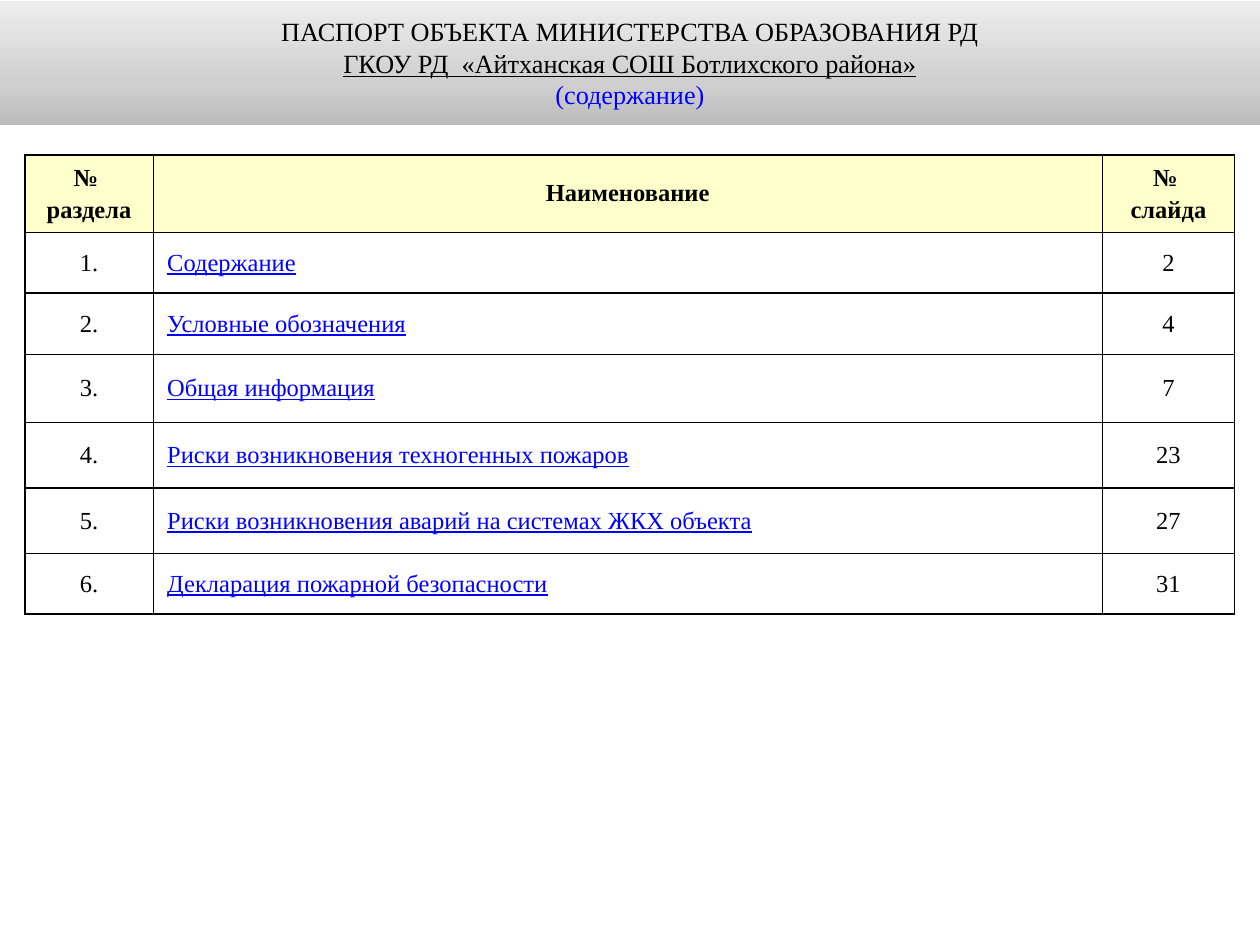
from lxml.etree import SubElement
from pptx import Presentation
from pptx.dml.color import RGBColor
from pptx.enum.shapes import MSO_SHAPE as SHAPE
from pptx.enum.text import MSO_ANCHOR as ANCHOR, PP_ALIGN as ALIGN
from pptx.oxml.ns import qn
from pptx.util import Cm, Pt


def rgb(value):
    return RGBColor.from_string(value)


def style(p, size, color="000000", align=ALIGN.CENTER, bold=False, underline=False):
    p.alignment = align
    for r in p.runs:
        r.font.name = "Times New Roman"
        r.font.size = Pt(size)
        r.font.bold = bold
        r.font.underline = underline
        r.font.color.rgb = rgb(color)


prs = Presentation()
prs.slide_width, prs.slide_height = Cm(25.4), Cm(19.05)
s = prs.slides.add_slide(prs.slide_layouts[6])

# Contents table
rows = [
    ("№ \nраздела", "Наименование", "№ \nслайда"),
    ("1.", "Содержание", "2"),
    ("2.", "Условные обозначения", "4"),
    ("3.", "Общая информация", "7"),
    ("4.", "Риски возникновения техногенных пожаров", "23"),
    ("5.", "Риски возникновения аварий на системах ЖКХ объекта", "27"),
    ("6.", "Декларация пожарной безопасности", "31"),
]
widths = [2.59, 19.13, 2.67]
heights = [1.57, 1.22, 1.24, 1.37, 1.32, 1.32, 1.22]

table = s.shapes.add_table(len(rows), len(widths), Cm(0.5), Cm(3.12),
                           Cm(sum(widths)), Cm(sum(heights))).table
for column, width in zip(table.columns, widths):
    column.width = Cm(width)

for i, (row, height) in enumerate(zip(rows, heights)):
    table.rows[i].height = Cm(height)
    header = i == 0
    for j, text in enumerate(row):
        cell = table.cell(i, j)
        cell.text_frame.text = text
        cell.vertical_anchor = ANCHOR.MIDDLE
        cell.margin_left = cell.margin_right = Cm(0.28)
        cell.margin_top = cell.margin_bottom = Cm(0.13)

        # Borders go ahead of the fill in the cell properties
        tc_pr = cell._tc.get_or_add_tcPr()
        for side in ("a:lnL", "a:lnR", "a:lnT", "a:lnB"):
            ln = SubElement(tc_pr, qn(side), w=str(Pt(1)))
            SubElement(SubElement(ln, qn("a:solidFill")), qn("a:srgbClr"), val="000000")
        cell.fill.solid()
        cell.fill.fore_color.rgb = rgb("FFFFCC" if header else "FFFFFF")

        for p in cell.text_frame.paragraphs:
            if header:
                style(p, 14, bold=True)
                p.space_before = Pt(2.8)
            elif j == 1:
                style(p, 14, "0000FF", ALIGN.LEFT, underline=True)
            else:
                style(p, 14)

# Title band with a three-stop gradient, darkest at the bottom
sp = s.shapes.add_shape(SHAPE.RECTANGLE, 0, Cm(0.02), prs.slide_width, Cm(2.5))
sp.shadow.inherit = False
sp.line.fill.background()
sp.fill.gradient()
sp.fill.gradient_angle = 90
stops = sp._element.spPr.find(qn("a:gradFill")).find(qn("a:gsLst"))
for stop in list(stops):
    stops.remove(stop)
for percent, color in ((0, "BCBCBC"), (35, "D0D0D0"), (100, "EDEDED")):
    stop = SubElement(stops, qn("a:gs"), pos=str(percent * 1000))
    SubElement(stop, qn("a:srgbClr"), val=color)

# Title text
tf = sp.text_frame
tf.word_wrap = True
tf.vertical_anchor = ANCHOR.MIDDLE
tf.text = ("ПАСПОРТ ОБЪЕКТА МИНИСТЕРСТВА ОБРАЗОВАНИЯ РД\n"
           "ГКОУ РД  «Айтханская СОШ Ботлихского района»\n"
           "(содержание)")
title, school, subtitle = tf.paragraphs
style(title, 15)
style(school, 15, underline=True)
style(subtitle, 15, "0000FF")

prs.save("out.pptx")
